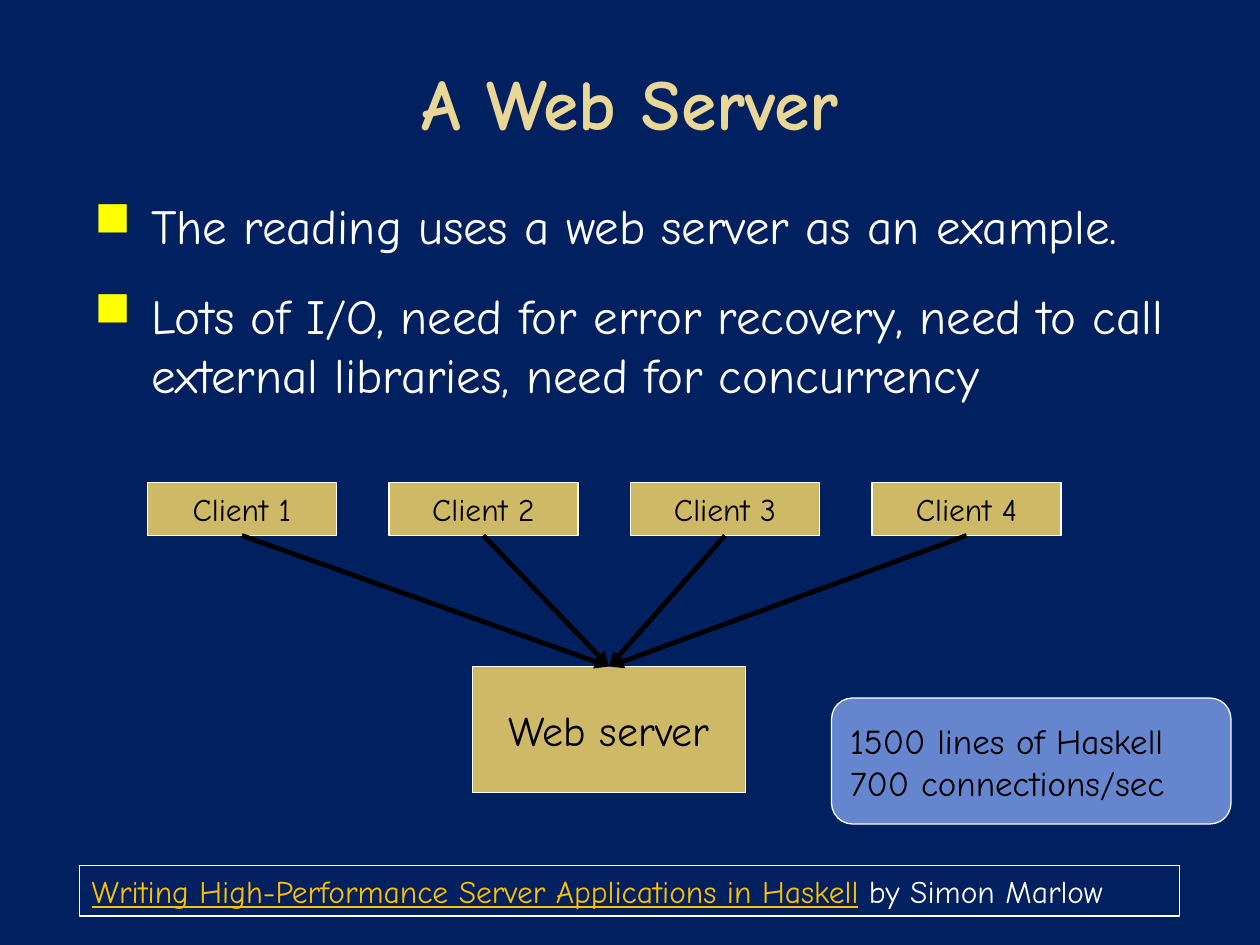
from dataclasses import dataclass

from lxml.etree import SubElement
from pptx import Presentation
from pptx.dml.color import RGBColor as Color
from pptx.enum.shapes import MSO_CONNECTOR as Connector, MSO_SHAPE as Shape
from pptx.enum.text import MSO_ANCHOR as Anchor, PP_ALIGN as Align
from pptx.oxml.ns import qn
from pptx.util import Inches, Pt

TITLE = "A Web Server"
BULLETS = [
    "The reading uses a web server as an example.",
    "Lots of I/O, need for error recovery, need to call external libraries, need for concurrency",
]
CLIENTS = ["Client 1", "Client 2", "Client 3", "Client 4"]
SERVER = "Web server"
FACTS = ["1500 lines of Haskell", "700 connections/sec"]
SOURCE_TITLE = "Writing High-Performance Server Applications in Haskell"
SOURCE_AUTHOR = " by Simon Marlow"

CLIENT_LEFT, CLIENT_TOP, CLIENT_STEP = 1.17, 3.83, 1.917
CLIENT_SIZE = (1.5, 0.42)
BOTTOM_SITE, TOP_SITE = 2, 0


@dataclass(frozen=True)
class Theme:
    font: str = "Comic Neue"
    background: str = "002060"
    title: str = "EAD696"
    text: str = "FFFFFF"
    bullet: str = "FFFF00"
    node: str = "CEB966"
    callout: str = "6585CF"
    ink: str = "000000"
    link: str = "FFC000"
    title_size: float = 41
    body_size: float = 28
    server_size: float = 24
    callout_size: float = 20
    small_size: float = 18
    border: float = 0.75
    arrow: float = 2.75


THEME = Theme()


def style_font(font, size, color):
    font.name = THEME.font
    font.size = Pt(size)
    font.color.rgb = Color.from_string(color)


def place(shape, left, top, width, height):
    shape.left, shape.top = Inches(left), Inches(top)
    shape.width, shape.height = Inches(width), Inches(height)


def add_box(page, area, lines, size, fill=None, kind=Shape.RECTANGLE, align=Align.CENTER):
    box = page.shapes.add_shape(kind, *map(Inches, area))
    box.shadow.inherit = False
    if fill:
        box.fill.solid()
        box.fill.fore_color.rgb = Color.from_string(fill)
    else:
        box.fill.background()
    box.line.color.rgb = Color.from_string(THEME.text)
    box.line.width = Pt(THEME.border)
    frame = box.text_frame
    frame.word_wrap = True
    frame.vertical_anchor = Anchor.MIDDLE
    frame.text = "\n".join(lines)
    for para in frame.paragraphs:
        para.alignment = align
        style_font(para.font, size, THEME.ink)
    return box


def add_title(page):
    title = page.shapes.title
    place(title, 0.5, 0.3, 9, 1.01)
    title.text_frame.text = TITLE
    title.text_frame.vertical_anchor = Anchor.MIDDLE
    para = title.text_frame.paragraphs[0]
    para.alignment = Align.CENTER
    style_font(para.font, THEME.title_size, THEME.title)
    para.font.bold = True


def add_bullets(page):
    box = page.shapes.add_textbox(*map(Inches, (0.5, 1.5, 9.18, 2.1)))
    frame = box.text_frame
    frame.word_wrap = True
    frame.text = "\n".join(BULLETS)
    for para in frame.paragraphs:
        style_font(para.font, THEME.body_size, THEME.text)
        para.space_before = Pt(18)
        props = para._p.get_or_add_pPr()
        props.set("marL", str(Inches(0.6)))
        props.set("indent", str(Inches(-0.45)))
        bullet_color = props.makeelement(qn("a:buClr"))
        SubElement(bullet_color, qn("a:srgbClr")).set("val", THEME.bullet)
        bullet = props.makeelement(qn("a:buChar"), {"char": "■"})
        spacing = props.find(qn("a:spcBef"))
        spacing.addnext(bullet_color)
        bullet_color.addnext(bullet)


def add_arrow(page, client, server):
    arrow = page.shapes.add_connector(Connector.STRAIGHT, 0, 0, 0, 0)
    arrow.begin_connect(client, BOTTOM_SITE)
    arrow.end_connect(server, TOP_SITE)
    arrow.line.color.rgb = Color.from_string(THEME.ink)
    arrow.line.width = Pt(THEME.arrow)
    props = arrow._element.spPr
    SubElement(props.find(qn("a:ln")), qn("a:tailEnd")).set("type", "triangle")
    SubElement(props, qn("a:effectLst"))


def add_diagram(page):
    server = add_box(page, (3.75, 5.29, 2.17, 1), [SERVER], THEME.server_size, THEME.node)
    for index, name in enumerate(CLIENTS):
        area = (CLIENT_LEFT + index * CLIENT_STEP, CLIENT_TOP, *CLIENT_SIZE)
        client = add_box(page, area, [name], THEME.small_size, THEME.node)
        add_arrow(page, client, server)
    add_box(page, (6.6, 5.54, 3.17, 1), FACTS, THEME.callout_size, THEME.callout,
            Shape.ROUNDED_RECTANGLE, Align.LEFT)


def add_source(page):
    box = add_box(page, (0.63, 6.87, 8.73, 0.4), [SOURCE_TITLE], THEME.small_size, align=Align.LEFT)
    para = box.text_frame.paragraphs[0]
    para.add_run().text = SOURCE_AUTHOR
    for span, color in zip(para.runs, (THEME.link, THEME.text)):
        style_font(span.font, THEME.small_size, color)
    para.runs[0].font.underline = True


def main():
    deck = Presentation()
    deck.slide_width, deck.slide_height = Inches(10), Inches(7.5)
    page = deck.slides.add_slide(deck.slide_layouts[5])
    page.background.fill.solid()
    page.background.fill.fore_color.rgb = Color.from_string(THEME.background)
    add_title(page)
    add_bullets(page)
    add_diagram(page)
    add_source(page)
    deck.save("out.pptx")


if __name__ == "__main__":
    main()
